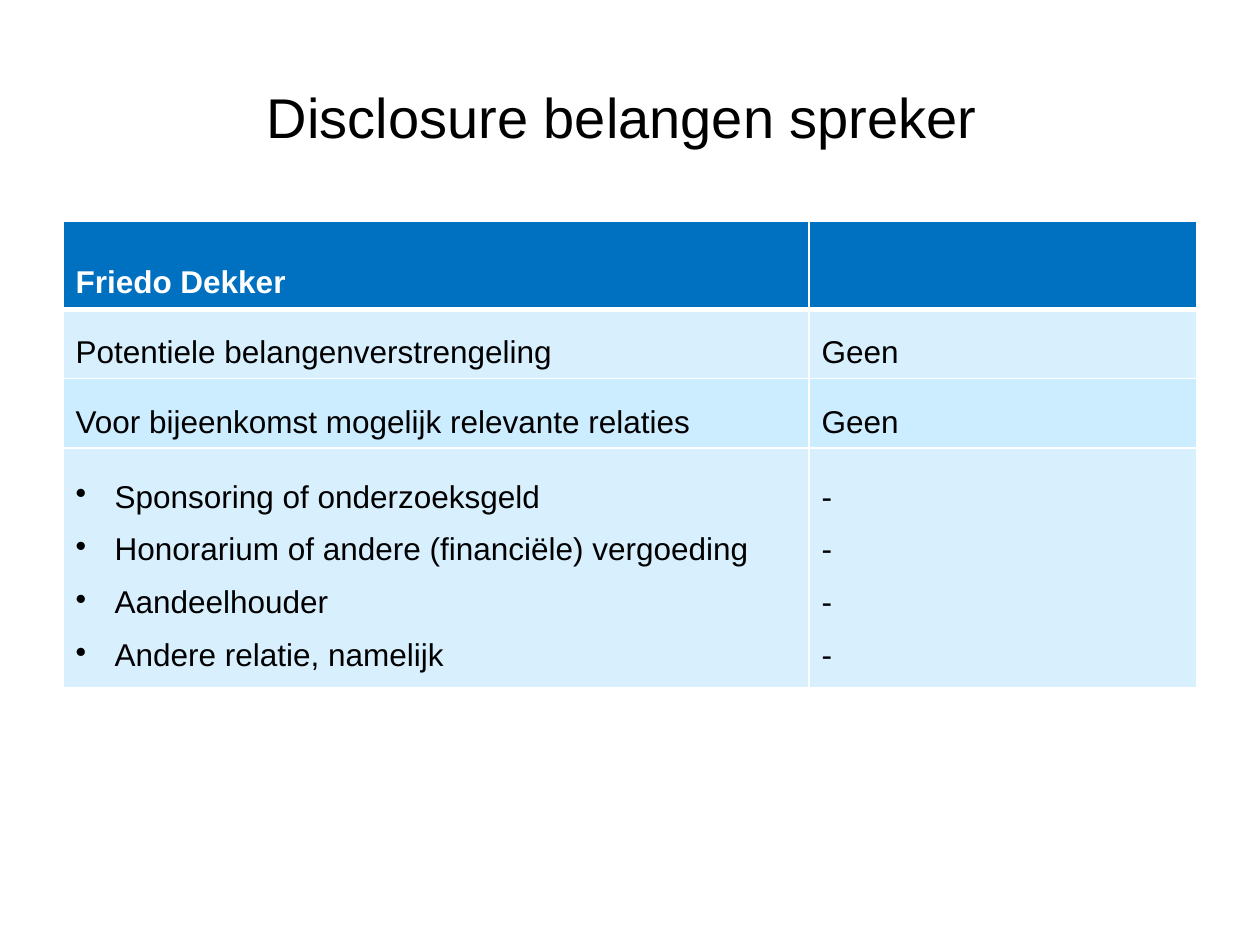
import pptx
import pptx.dml.color
import pptx.enum.text
import pptx.oxml
import pptx.oxml.ns
import pptx.util

SCALE = 914400 / 126
FONT = "Arial"
WHITE, BLACK, BLUE = "FFFFFF", "000000", "0070C0"
PALE, LIGHT = "D8EFFE", "CCECFF"
MIDDLE = pptx.enum.text.MSO_ANCHOR.MIDDLE
WIDTHS = [746, 388]
# height, fill, text colour, line spacing, bulleted, paragraphs of each cell
ROWS = [
    (82, BLUE, WHITE, 2.0, False, [["Friedo Dekker"], []]),
    (66, PALE, BLACK, 1.5, False,
     [["Potentiele belangenverstrengeling"], ["Geen"]]),
    (65, LIGHT, BLACK, 1.5, False,
     [["Voor bijeenkomst mogelijk relevante relaties"], ["Geen"]]),
    (224, PALE, BLACK, 1.5, True,
     [["Sponsoring of onderzoeksgeld",
       "Honorarium of andere (financiële) vergoeding",
       "Aandeelhouder",
       "Andere relatie, namelijk"], ["-"] * 4]),
]


def px(n):
    return pptx.util.Emu(round(n * SCALE))


def color(code):
    return pptx.dml.color.RGBColor.from_string(code)


def style(font, code, **values):
    font.color.rgb = color(code)
    for name, value in {"name": FONT, **values}.items():
        setattr(font, name, value)


def bullet(para):
    props = para._p.get_or_add_pPr()
    props.set("marL", str(px(39)))
    props.set("indent", str(-px(39)))
    mark = pptx.oxml.parse_xml(
        f'<a:buChar {pptx.oxml.ns.nsdecls("a")} char="•"/>')
    props.append(mark)


def border(cell, sides):
    """Draw white lines; sides maps each side's letter to points."""
    props = cell._tc.get_or_add_tcPr()
    for spot, (side, width) in enumerate(sides.items()):
        line = pptx.oxml.parse_xml(
            f'<a:ln{side} {pptx.oxml.ns.nsdecls("a")} '
            f'w="{pptx.util.Pt(width)}"><a:solidFill>'
            f'<a:srgbClr val="{WHITE}"/></a:solidFill></a:ln{side}>')
        props.insert(spot, line)


def write(cell, lines, code, gap, bold, dots):
    frame = cell.text_frame
    frame.text = "\n".join(lines)
    for para in frame.paragraphs:
        para.line_spacing = gap
        if dots:
            bullet(para)
        style(para.font, code, size=pptx.util.Pt(18), bold=bold)
        for run in para.runs:
            style(run.font, code, size=pptx.util.Pt(18), bold=bold)


def title(slide, text):
    frame = slide.shapes.add_textbox(
        px(63), px(38), px(1134), px(157)).text_frame
    frame.word_wrap = True
    frame.vertical_anchor = MIDDLE
    para = frame.paragraphs[0]
    para.alignment = pptx.enum.text.PP_ALIGN.CENTER
    run = para.add_run()
    run.text = text
    style(run.font, BLACK, size=pptx.util.Pt(32))


def grid(slide):
    table = slide.shapes.add_table(
        len(ROWS), len(WIDTHS), px(63), px(221), px(sum(WIDTHS)),
        px(sum(row[0] for row in ROWS))).table
    for col, width in zip(table.columns, WIDTHS):
        col.width = px(width)
    for r, (height, fill, code, gap, dots, texts) in enumerate(ROWS):
        table.rows[r].height = px(height)
        for c, lines in enumerate(texts):
            cell = table.cell(r, c)
            cell.vertical_anchor = MIDDLE
            cell.fill.solid()
            cell.fill.fore_color.rgb = color(fill)
            border(cell, {"L": 1, "R": 1, "T": 3 if r == 1 else 1,
                          "B": 3 if r == 0 else 1})
            write(cell, lines, code, gap, r == 0, dots and c == 0)


def main():
    deck = pptx.Presentation()
    deck.slide_width, deck.slide_height = px(1260), px(945)
    slide = deck.slides.add_slide(deck.slide_layouts[6])
    title(slide, "Disclosure belangen spreker ")
    grid(slide)
    deck.save("out.pptx")


if __name__ == "__main__":
    main()
